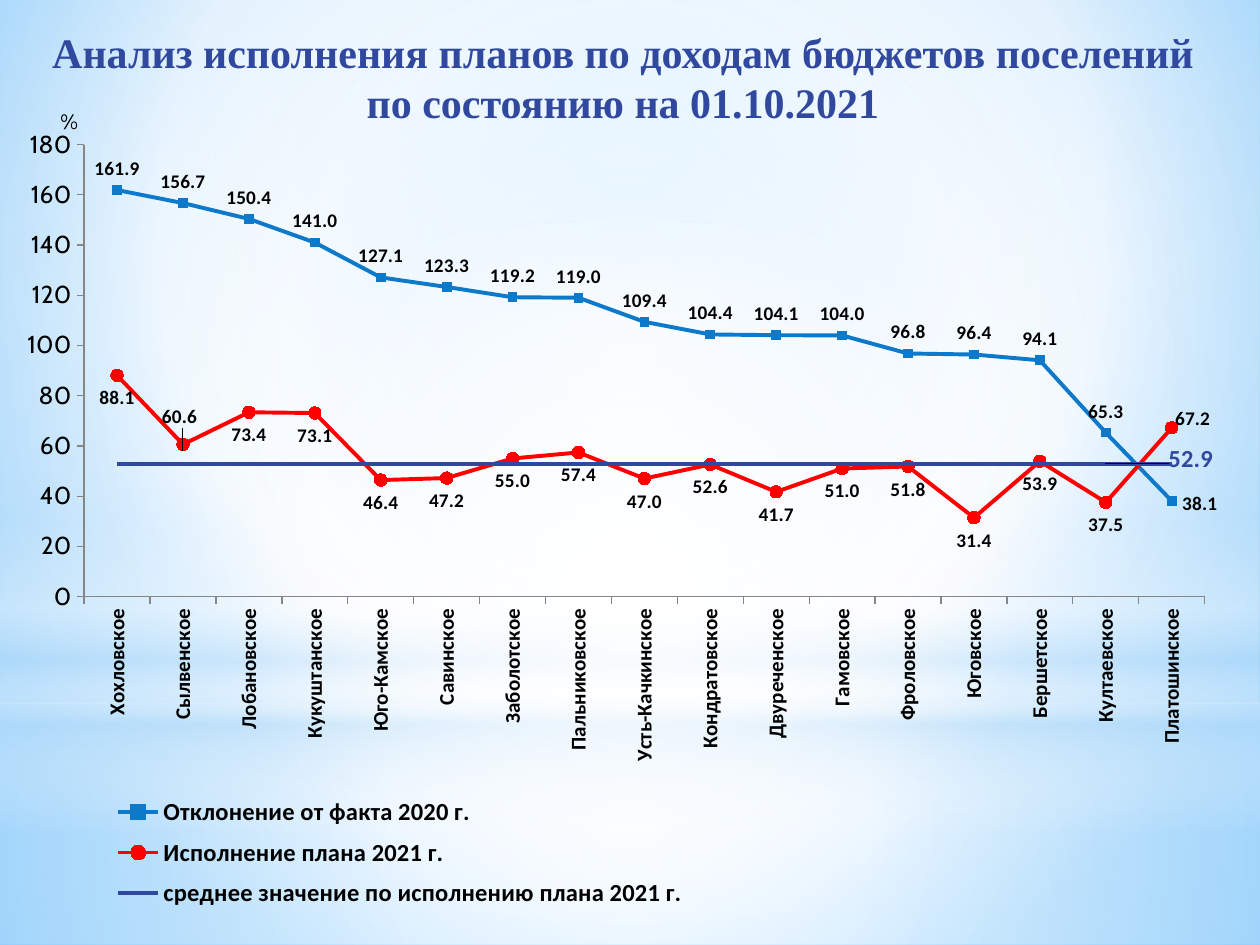
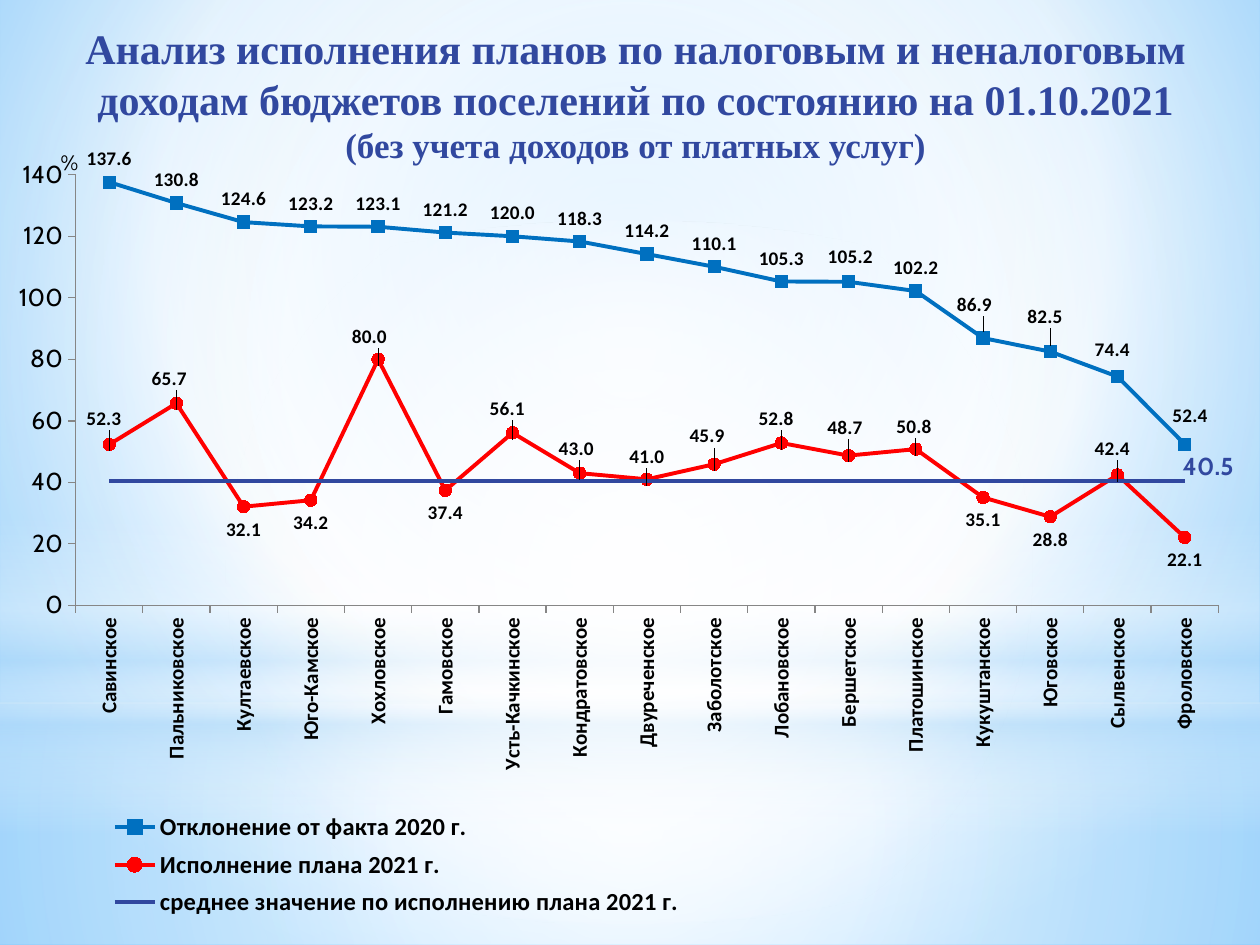
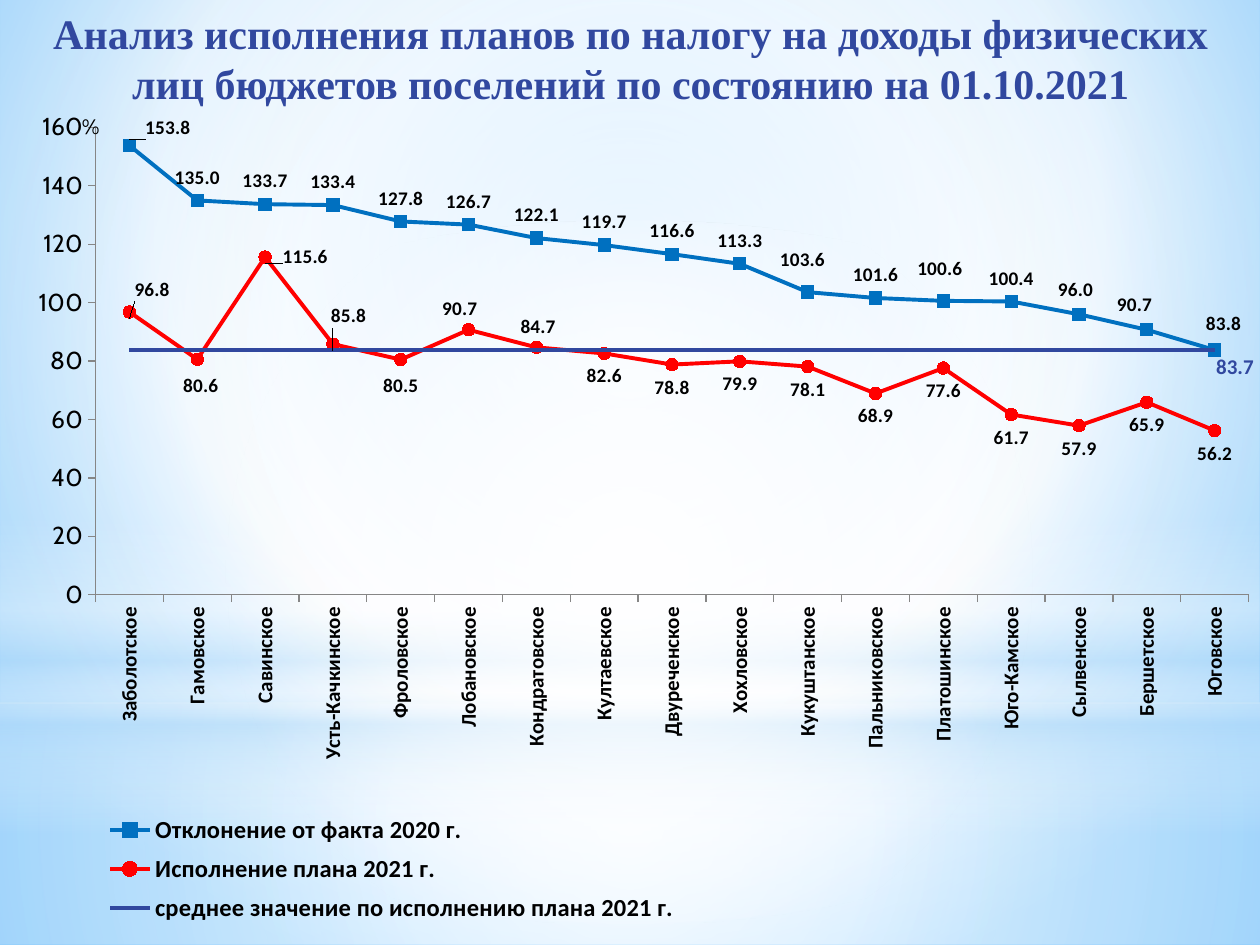
"""Builds three slides of line charts on how settlement budgets meet their income plans."""
import pptx
import pptx.chart.data
import pptx.dml.color
import pptx.enum.chart
import pptx.enum.shapes
import pptx.enum.text
import pptx.oxml
import pptx.oxml.ns
import pptx.util

Pt = pptx.util.Pt
qn = pptx.oxml.ns.qn
nsdecls = pptx.oxml.ns.nsdecls
chart_enum = pptx.enum.chart
LABEL = chart_enum.XL_LABEL_POSITION
MARKER = chart_enum.XL_MARKER_STYLE
SHAPE = pptx.enum.shapes.MSO_SHAPE

NAVY, RED, BLACK, AXIS = "31489F", "FF0000", "000000", "868686"
CENTRE = (50, 50, 50, 50)
BACKGROUND = [(0, "9ED5FF", 100), (60, "FFFFFF", 100), (100, "5BB9FF", 100)]
BANDS = [
    (SHAPE.RECTANGLE, 401.76, 138.24, CENTRE,
     [(0, "FFFFFF", 91), (37, "FFFFFF", 76), (100, "B4DCFA", 79)]),
    (SHAPE.RECTANGLE, 0, 401.76, CENTRE,
     [(0, "FFFFFF", 89), (48, "FFFFFF", 62), (100, "B4DCFA", 79)]),
    (SHAPE.RECTANGLE, 296.64, 180, None,
     [(0, "FFFFFF", 0), (29, "FFFFFF", 30), (45, "B4DCFA", 40),
      (55, "FFFFFF", 26), (65, "B4DCFA", 60), (100, "FFFFFF", 0)]),
    (SHAPE.OVAL, 126, 401.76, CENTRE, [(0, "FFFFFF", 100), (56, "FFFFFF", 0)]),
]


def rgb(value):
    return pptx.dml.color.RGBColor.from_string(value)


def set_font(font, name, size, color=BLACK, bold=False):
    font.name, font.size, font.bold = name, Pt(size), bold
    font.color.rgb = rgb(color)


def set_gradient(parent, stops, focus):
    gs = "".join(
        f'<a:gs pos="{pos * 1000}"><a:srgbClr val="{color}">'
        f'<a:alpha val="{alpha * 1000}"/></a:srgbClr></a:gs>'
        for pos, color, alpha in stops)
    if focus:
        l, t, r, b = (side * 1000 for side in focus)
        way = (f'<a:path path="circle"><a:fillToRect l="{l}" t="{t}" '
               f'r="{r}" b="{b}"/></a:path>')
    else:
        way = '<a:lin ang="5400000" scaled="0"/>'
    grad = pptx.oxml.parse_xml(
        f'<a:gradFill {nsdecls("a")} rotWithShape="1">'
        f'<a:gsLst>{gs}</a:gsLst>{way}</a:gradFill>')
    parent.replace(parent.find(qn("a:solidFill")), grad)


def set_layout(parent, index, x, y, size=None, edge=True, inner=False):
    parts = [("layoutTarget", "inner")] if inner else []
    if edge:
        parts += [("xMode", "edge"), ("yMode", "edge")]
    parts += [("x", round(x, 4)), ("y", round(y, 4))]
    if size:
        parts += zip("wh", size)
    body = "".join(f'<c:{tag} val="{val}"/>' for tag, val in parts)
    for old in parent.findall(qn("c:layout")):
        parent.remove(old)
    parent.insert(index, pptx.oxml.parse_xml(
        f'<c:layout {nsdecls("c")}><c:manualLayout>{body}</c:manualLayout></c:layout>'))


class Deck:
    def __init__(self):
        self.prs = pptx.Presentation()
        self.prs.slide_width, self.prs.slide_height = Pt(720), Pt(540)
        self.slide = None

    def add_slide(self):
        self.slide = self.prs.slides.add_slide(self.prs.slide_layouts[5])
        if len(self.prs.slides) == 1:
            self.backdrop()

    def backdrop(self):
        master = self.prs.slide_master
        master.background.fill.solid()
        set_gradient(master.element.find(".//" + qn("p:bgPr")), BACKGROUND, (20, 10, 20, 60))
        tree = master.element.find(".//" + qn("p:spTree"))
        for i, (kind, top, height, focus, stops) in enumerate(BANDS):
            sp = self.slide.shapes.add_shape(kind, 0, Pt(top), Pt(720), Pt(height))
            sp.shadow.inherit = False
            sp.line.fill.background()
            sp.fill.solid()
            set_gradient(sp.element.spPr, stops, focus)
            sp.element.nvSpPr.cNvPr.set("id", str(20 + i))
            tree.insert(2 + i, sp.element)

    def title(self, box, lines):
        sp = self.slide.shapes.title
        sp.left, sp.top, sp.width, sp.height = map(Pt, box)
        tf = sp.text_frame
        tf.word_wrap = True
        tf.auto_size = pptx.enum.text.MSO_AUTO_SIZE.NONE
        tf.vertical_anchor = pptx.enum.text.MSO_ANCHOR.TOP
        p = tf.paragraphs[0]
        p.alignment = pptx.enum.text.PP_ALIGN.CENTER
        for i, (text, size) in enumerate(lines):
            if i:
                p.add_line_break()
            r = p.add_run()
            r.text = text
            set_font(r.font, "Times New Roman", size, NAVY, True)

    def chart(self, box, cats, values, top, plot, percent_at, legend, blue, marker, moves,
              average_font):
        data = pptx.chart.data.CategoryChartData(number_format="#,##0.0")
        data.categories = cats
        fact, plan, average = values
        data.add_series("Отклонение от факта 2020 г.", fact)
        data.add_series("Исполнение плана 2021 г.", plan)
        data.add_series("среднее значение по исполнению плана 2021 г.", [average] * len(cats))
        chart = self.slide.shapes.add_chart(
            chart_enum.XL_CHART_TYPE.LINE_MARKERS, *map(Pt, box), data).chart
        set_font(chart.font, "Cabin", 18)
        chart.has_title = False
        chart.plots[0].vary_by_categories = False
        x, y, *size = plot
        set_layout(chart.plots[0]._element.getparent(), 0, x, y, size, inner=True)
        self.axes(chart, top, percent_at)
        self.legend(chart, *legend)
        looks = [
            (blue, marker, LABEL.ABOVE, ("Calibri", 11, BLACK, True)),
            (RED, (MARKER.CIRCLE, 7), LABEL.BELOW, ("Calibri", 11, BLACK, True)),
            (NAVY, (MARKER.NONE, 5), LABEL.RIGHT, (*average_font, NAVY, True)),
        ]
        for ser, look, shifts in zip(chart.plots[0].series, looks, moves):
            self.series(ser, *look, shifts, box[2:])

    def axes(self, chart, top, percent_at):
        cat, val = chart.category_axis, chart.value_axis
        for axis in (cat, val):
            axis.has_major_gridlines = False
            axis.major_tick_mark = chart_enum.XL_TICK_MARK.OUTSIDE
            axis.format.line.color.rgb = rgb(AXIS)
        set_font(cat.tick_labels.font, "Calibri", 12, bold=True)
        cat._element.find(qn("c:txPr")).find(qn("a:bodyPr")).set("rot", "-5400000")
        set_font(val.tick_labels.font, "Cabin", 14)
        val.tick_labels.number_format = "#,##0"
        val.tick_labels.number_format_is_linked = False
        val.minimum_scale, val.maximum_scale, val.major_unit = 0, top, 20
        tf = val.axis_title.text_frame
        r = tf.paragraphs[0].add_run()
        r.text = "%"
        set_font(r.font, "Cabin", 12)
        body = tf._txBody.find(qn("a:bodyPr"))
        body.set("rot", "0")
        body.set("vert", "horz")
        set_layout(val.axis_title._element, 1, *percent_at)

    def legend(self, chart, x, y, *size):
        chart.has_legend = True
        legend = chart.legend
        legend.position = chart_enum.XL_LEGEND_POSITION.BOTTOM
        legend.include_in_layout = False
        set_font(legend.font, "Calibri", 14, bold=True)
        set_layout(legend._element, 1, x, y, size)

    def series(self, ser, color, marker, position, font, shifts, chart_size):
        ser.smooth = False
        ser.format.line.color.rgb = rgb(color)
        ser.format.line.width = Pt(2.25)
        ser.marker.style, ser.marker.size = marker
        if marker[0] != MARKER.NONE:
            ser.marker.format.fill.solid()
            ser.marker.format.fill.fore_color.rgb = rgb(color)
            ser.marker.format.line.color.rgb = rgb(color)
        labels = ser.data_labels
        labels.show_value = position != LABEL.RIGHT
        labels.position = position
        labels.number_format = "#,##0.0"
        labels.number_format_is_linked = False
        set_font(labels.font, *font)
        for leader in labels._element.findall(qn("c:showLeaderLines")):
            labels._element.remove(leader)
        for idx, (dx, dy) in shifts.items():
            label = ser.points[idx].data_label
            label.position = position
            set_font(label.font, *font)
            dlbl = next(d for d in labels._element.findall(qn("c:dLbl"))
                        if d.find(qn("c:idx")).get("val") == str(idx))
            set_layout(dlbl, 1, dx / chart_size[0], dy / chart_size[1], edge=False)
            dlbl.insert(2, pptx.oxml.parse_xml(
                f'<c:numFmt {nsdecls("c")} formatCode="#,##0.0" sourceLinked="0"/>'))


def main():
    deck = Deck()

    deck.add_slide()
    deck.title((10, 11.5, 692, 77), [
        ("Анализ исполнения планов по доходам бюджетов поселений", 24),
        ("по состоянию на 01.10.2021", 24)])
    deck.chart(
        (2.9, 43.2, 717.1, 487.4),
        ["Хохловское", "Сылвенское", "Лобановское", "Кукуштанское", "Юго-Камское", "Савинское",
         "Заболотское", "Пальниковское", "Усть-Качкинское", "Кондратовское", "Двуреченское",
         "Гамовское", "Фроловское", "Юговское", "Бершетское", "Култаевское", "Платошинское"],
        ([161.9, 156.7, 150.4, 141, 127.1, 123.3, 119.2, 119, 109.4, 104.4, 104.1, 104, 96.8,
          96.4, 94.1, 65.3, 38.1],
         [88.1, 60.6, 73.4, 73.1, 46.4, 47.2, 55, 57.4, 47, 52.6, 41.7, 51, 51.8, 31.4, 53.9,
          37.5, 67.2],
         52.9),
        top=180, plot=(0.063, 0.081, 0.893, 0.53), percent_at=(0.041, 0.033),
        legend=(0.08, 0.833, 0.47, 0.156), blue="0D79CA", marker=(MARKER.SQUARE, 5),
        moves=({16: (16, 14)}, {1: (-2, -29), 16: (12, -18)}, {15: (33, -3)}),
        average_font=("Calibri", 14))

    deck.add_slide()
    deck.title((14.4, 9.4, 697.7, 84.2), [
        ("Анализ исполнения планов по налоговым и неналоговым доходам бюджетов поселений "
         "по состоянию на 01.10.2021", 24),
        ("(без учета доходов от платных услуг)", 20)])
    deck.chart(
        (0, 52.6, 720, 487.4),
        ["Савинское", "Пальниковское", "Култаевское", "Юго-Камское", "Хохловское", "Гамовское",
         "Усть-Качкинское", "Кондратовское", "Двуреченское", "Заболотское", "Лобановское",
         "Бершетское", "Платошинское", "Кукуштанское", "Юговское", "Сылвенское", "Фроловское"],
        ([137.6, 130.8, 124.6, 123.2, 123.1, 121.2, 120, 118.3, 114.2, 110.1, 105.3, 105.2,
          102.2, 86.9, 82.5, 74.4, 52.4],
         [52.3, 65.7, 32.1, 34.2, 80, 37.4, 56.1, 43, 41, 45.9, 52.8, 48.7, 50.8, 35.1, 28.8,
          42.4, 22.1],
         40.5),
        top=140, plot=(0.06, 0.097, 0.907, 0.505), percent_at=(0.045, 0.062),
        legend=(0.08, 0.836, 0.47, 0.14), blue="0070C0", marker=(MARKER.SQUARE, 7),
        moves=({11: (1, -1), 13: (-5, -6), 14: (-3, -7), 15: (-3, -2), 16: (3, -3)},
               {0: (-3, -28), 1: (-4, -27), 4: (-5, -26), 6: (-3, -27), 7: (-2, -27),
                8: (0, -26), 9: (-4, -29), 10: (-3, -27), 11: (-2, -29), 12: (-1, -26),
                15: (-3, -28)},
               {16: (-4, -8)}),
        average_font=("Cabin", 14))

    deck.add_slide()
    deck.title((14.4, 0.7, 692, 45.4), [
        ("Анализ исполнения планов по налогу на доходы физических лиц бюджетов поселений "
         "по состоянию на 01.10.2021", 24)])
    deck.chart(
        (2.2, 50.4, 717.8, 487.4),
        ["Заболотское", "Гамовское", "Савинское", "Усть-Качкинское", "Фроловское", "Лобановское",
         "Кондратовское", "Култаевское", "Двуреченское", "Хохловское", "Кукуштанское",
         "Пальниковское", "Платошинское", "Юго-Камское", "Сылвенское", "Бершетское", "Юговское"],
        ([153.8, 135, 133.7, 133.4, 127.8, 126.7, 122.1, 119.7, 116.6, 113.3, 103.6, 101.6,
          100.6, 100.4, 96, 90.7, 83.8],
         [96.8, 80.6, 115.6, 85.8, 80.5, 90.7, 84.7, 82.6, 78.8, 79.9, 78.1, 68.9, 77.6, 61.7,
          57.9, 65.9, 56.2],
         83.7),
        top=160, plot=(0.073, 0.046, 0.918, 0.548), percent_at=(0.059, 0.024),
        legend=(0.074, 0.842, 0.47, 0.147), blue="0070C0", marker=(MARKER.SQUARE, 7),
        moves=({0: (22, 3), 10: (-3, -5), 12: (-2, -5), 14: (-2, -1), 15: (-7, -1), 16: (5, -2)},
               {0: (13, -26), 1: (2, 2), 2: (23, -13), 3: (9, -29), 4: (0, 2), 5: (-5, -25),
                6: (1, -25)},
               {16: (-2, 10)}),
        average_font=("Calibri", 12))

    deck.prs.save("out.pptx")


if __name__ == "__main__":
    main()
